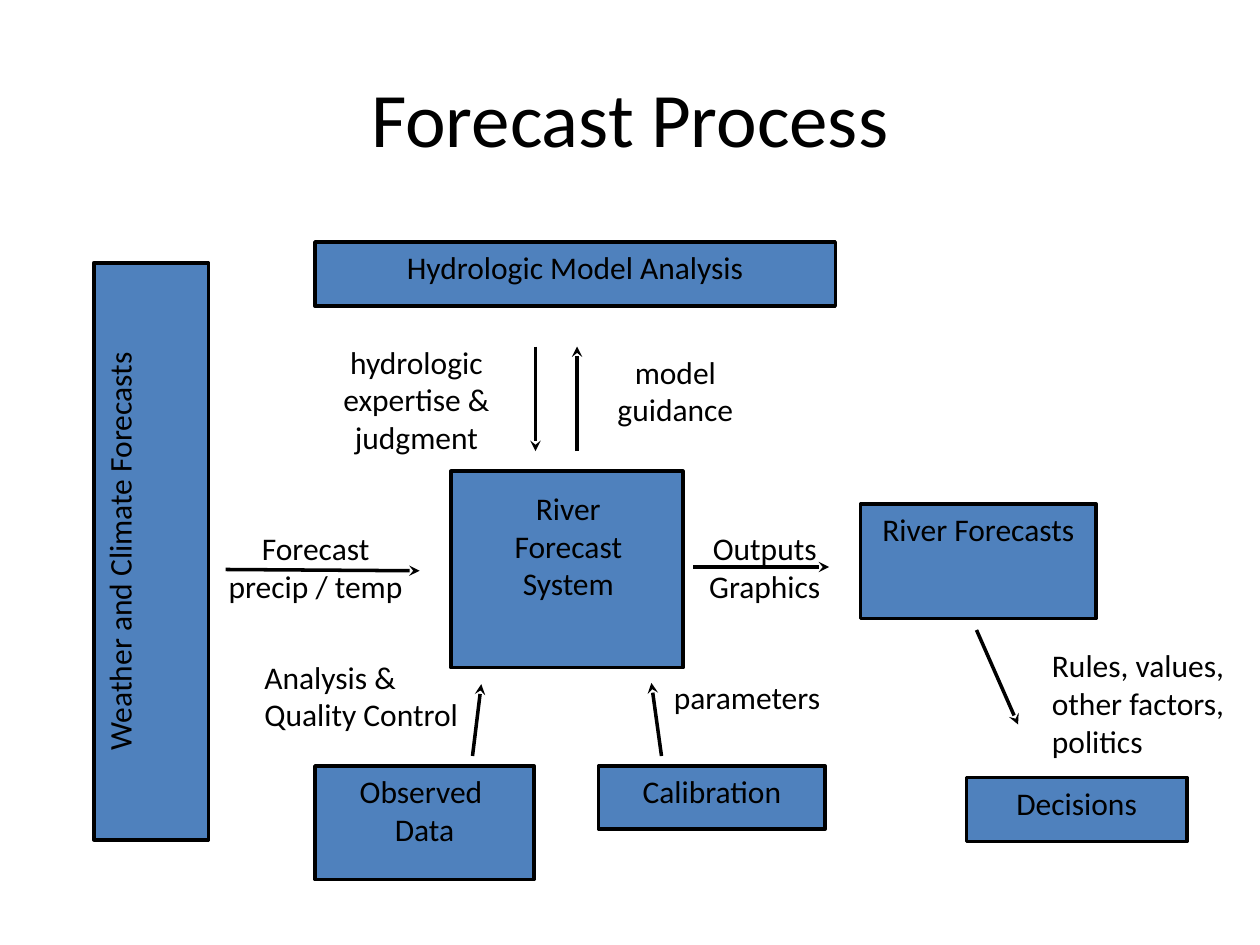
from dataclasses import dataclass

from lxml.etree import SubElement
from pptx import Presentation
from pptx.dml.color import RGBColor
from pptx.enum.shapes import MSO_CONNECTOR, MSO_SHAPE
from pptx.enum.text import MSO_ANCHOR, PP_ALIGN
from pptx.oxml.ns import qn
from pptx.util import Inches, Pt


@dataclass(frozen=True)
class Theme:
    font: str = "Calibri"
    ink: RGBColor = RGBColor(0x00, 0x00, 0x00)
    box_fill: RGBColor = RGBColor(0x4F, 0x81, 0xBD)
    title_size: int = 44
    body_size: int = 18
    line_width: int = 2


THEME = Theme()


def write(shape, text, size=THEME.body_size, align=PP_ALIGN.CENTER,
          anchor=MSO_ANCHOR.TOP, wrap=False):
    """Fill a shape with text, one paragraph per line."""
    frame = shape.text_frame
    frame.text = text
    frame.word_wrap = wrap
    frame.vertical_anchor = anchor
    for paragraph in frame.paragraphs:
        paragraph.alignment = align
        for run in paragraph.runs:
            run.font.name = THEME.font
            run.font.size = Pt(size)
            run.font.color.rgb = THEME.ink


def add_label(slide, area, text, **style):
    label = slide.shapes.add_textbox(*map(Inches, area))
    write(label, text, **style)


def add_stage(slide, area, text="", rotation=0, wrap=False):
    stage = slide.shapes.add_shape(MSO_SHAPE.RECTANGLE, *map(Inches, area))
    stage.rotation = rotation
    stage.shadow.inherit = False
    stage.fill.solid()
    stage.fill.fore_color.rgb = THEME.box_fill
    stage.line.color.rgb = THEME.ink
    stage.line.width = Pt(THEME.line_width)
    if text:
        write(stage, text, wrap=wrap)


def add_arrow(slide, start, end):
    arrow = slide.shapes.add_connector(
        MSO_CONNECTOR.STRAIGHT, *map(Inches, start + end))
    arrow.line.color.rgb = THEME.ink
    arrow.line.width = Pt(THEME.line_width)
    properties = arrow._element.spPr
    SubElement(arrow.line._get_or_add_ln(), qn("a:tailEnd"), type="stealth")
    SubElement(properties, qn("a:effectLst"))


def main():
    presentation = Presentation()
    presentation.slide_width = Inches(10)
    presentation.slide_height = Inches(7.5)
    slide = presentation.slides.add_slide(presentation.slide_layouts[6])

    # Title
    add_label(slide, (0.5, 0.3, 9, 1.25), "Forecast Process",
              size=THEME.title_size, anchor=MSO_ANCHOR.MIDDLE, wrap=True)

    # Stages of the process
    add_stage(slide, (-1.09, 3.92, 4.58, 0.91),
              "Weather and Climate Forecasts", rotation=270, wrap=True)
    add_stage(slide, (2.5, 1.92, 4.13, 0.51), "Hydrologic Model Analysis")
    add_stage(slide, (2.5, 6.08, 1.74, 0.9), "Observed \nData")
    add_stage(slide, (4.75, 6.08, 1.8, 0.5), "Calibration")
    add_stage(slide, (6.83, 4, 1.87, 0.91), "River Forecasts", wrap=True)
    add_stage(slide, (7.67, 6.17, 1.75, 0.51), "Decisions", wrap=True)

    # Central system, with its name set in a separate label
    add_stage(slide, (3.58, 3.74, 1.84, 1.56))
    add_label(slide, (3.75, 3.83, 1.52, 1.31), "River\nForecast\nSystem")

    # Flows between stages
    flows = [
        ((1.79, 4.52), (3.33, 4.53)),  # weather to system
        ((4.25, 2.75), (4.25, 3.58)),  # model analysis to system
        ((4.58, 3.58), (4.58, 2.75)),  # system to model analysis
        ((3.75, 6), (3.82, 5.43)),     # observed data to system
        ((5.25, 6), (5.17, 5.42)),     # calibration to system
        ((5.5, 4.5), (6.58, 4.5)),     # system to river forecasts
        ((7.75, 5), (8.08, 5.75)),     # river forecasts to decisions
    ]
    for start, end in flows:
        add_arrow(slide, start, end)

    # What each flow carries
    add_label(slide, (1.68, 4.15, 1.65, 0.7), "Forecast\nprecip / temp")
    add_label(slide, (2.58, 2.67, 1.45, 1),
              "hydrologic\nexpertise &\njudgment")
    add_label(slide, (4.75, 2.75, 1.22, 0.7), "model\nguidance")
    add_label(slide, (5.47, 4.15, 1.2, 0.7), "Outputs\nGraphics")
    add_label(slide, (2, 5.17, 1.89, 0.71), "Analysis &\nQuality Control",
              align=PP_ALIGN.LEFT)
    add_label(slide, (5.25, 5.33, 1.47, 0.4), "parameters",
              align=PP_ALIGN.LEFT)
    add_label(slide, (8.25, 5.08, 1.92, 1.01),
              "Rules, values, other factors, politics",
              align=PP_ALIGN.LEFT, wrap=True)

    presentation.save("out.pptx")


if __name__ == "__main__":
    main()
